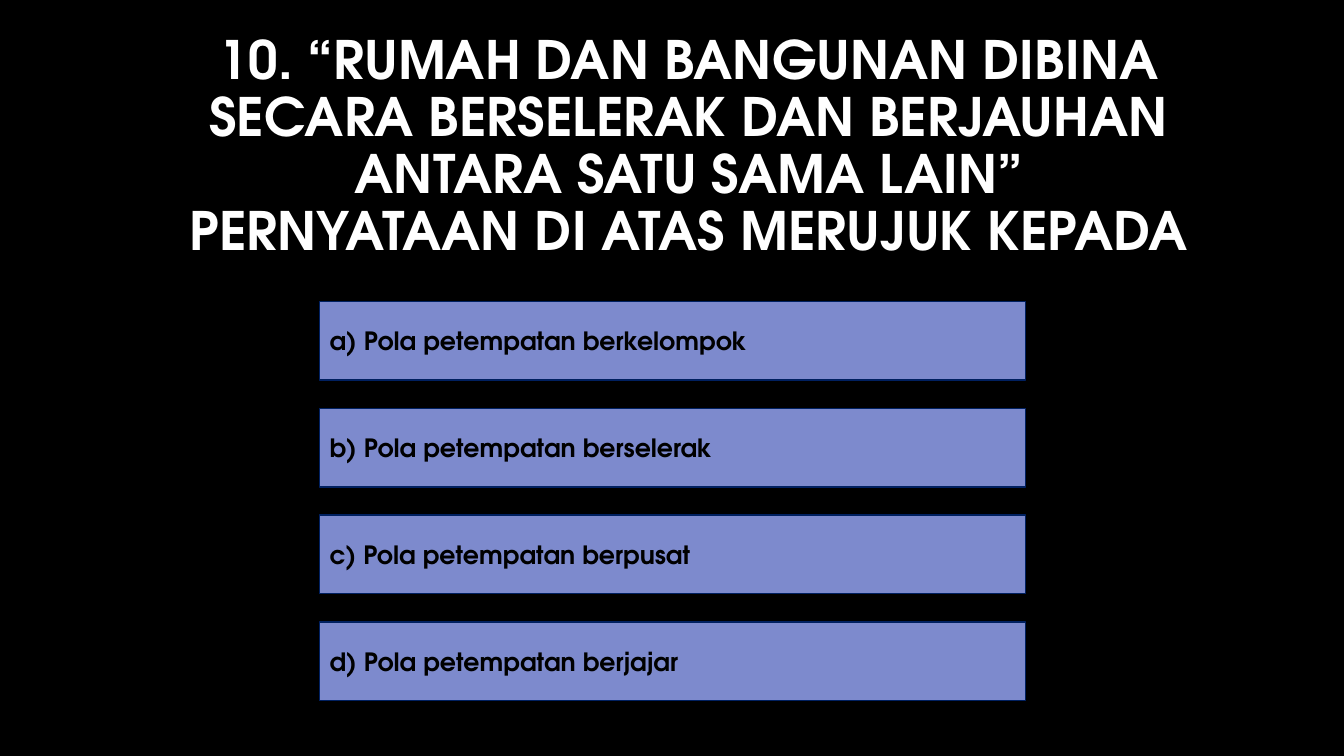
from pptx import Presentation
from pptx.dml.color import RGBColor
from pptx.enum.shapes import MSO_SHAPE
from pptx.enum.text import MSO_ANCHOR, MSO_AUTO_SIZE, PP_ALIGN
from pptx.util import Inches, Pt

BLACK = RGBColor(0x00, 0x00, 0x00)
WHITE = RGBColor(0xFF, 0xFF, 0xFF)
PERIWINKLE = RGBColor(0x7D, 0x8A, 0xCD)
NAVY = RGBColor(0x00, 0x20, 0x60)
FONT = "TeX Gyre Adventor"


def write(shape, lines, size, color, align, spacing=1.0):
    """Fill a shape with one bold paragraph, broken into the given lines."""
    frame = shape.text_frame
    frame.word_wrap = True
    frame.auto_size = MSO_AUTO_SIZE.NONE
    frame.vertical_anchor = MSO_ANCHOR.MIDDLE
    para = frame.paragraphs[0]
    para.alignment = align
    para.line_spacing = spacing
    for index, line in enumerate(lines):
        if index:
            para.add_line_break()
        span = para.add_run()
        span.text = line
        span.font.name = FONT
        span.font.size = Pt(size)
        span.font.bold = True
        span.font.color.rgb = color


deck = Presentation()
deck.slide_width = Inches(13.33)
deck.slide_height = Inches(7.5)
page = deck.slides.add_slide(deck.slide_layouts[5])
page.background.fill.solid()
page.background.fill.fore_color.rgb = BLACK

# Question
title = page.shapes.title
title.left, title.top = Inches(1.08), Inches(0.48)
title.width, title.height = Inches(11.5), Inches(1.97)
question = [
    "10. “RUMAH DAN BANGUNAN DIBINA SECARA BERSELERAK DAN BERJAUHAN ANTARA SATU SAMA LAIN”",
    "PERNYATAAN DI ATAS MERUJUK KEPADA",
]
write(title, question, size=37.8, color=WHITE, align=PP_ALIGN.CENTER, spacing=0.9)

# Answer choices, evenly stacked
answers = [
    "a) Pola petempatan berkelompok",
    "b) Pola petempatan berselerak",
    "c) Pola petempatan berpusat",
    "d) Pola petempatan berjajar",
]
for row, answer in enumerate(answers):
    box = page.shapes.add_shape(
        MSO_SHAPE.RECTANGLE, Inches(3.17), Inches(2.99 + 1.06 * row), Inches(7), Inches(0.78)
    )
    box.shadow.inherit = False
    box.fill.solid()
    box.fill.fore_color.rgb = PERIWINKLE
    box.line.color.rgb = NAVY
    box.line.width = Pt(1)
    write(box, [answer], size=18, color=BLACK, align=PP_ALIGN.LEFT)

deck.save("out.pptx")
